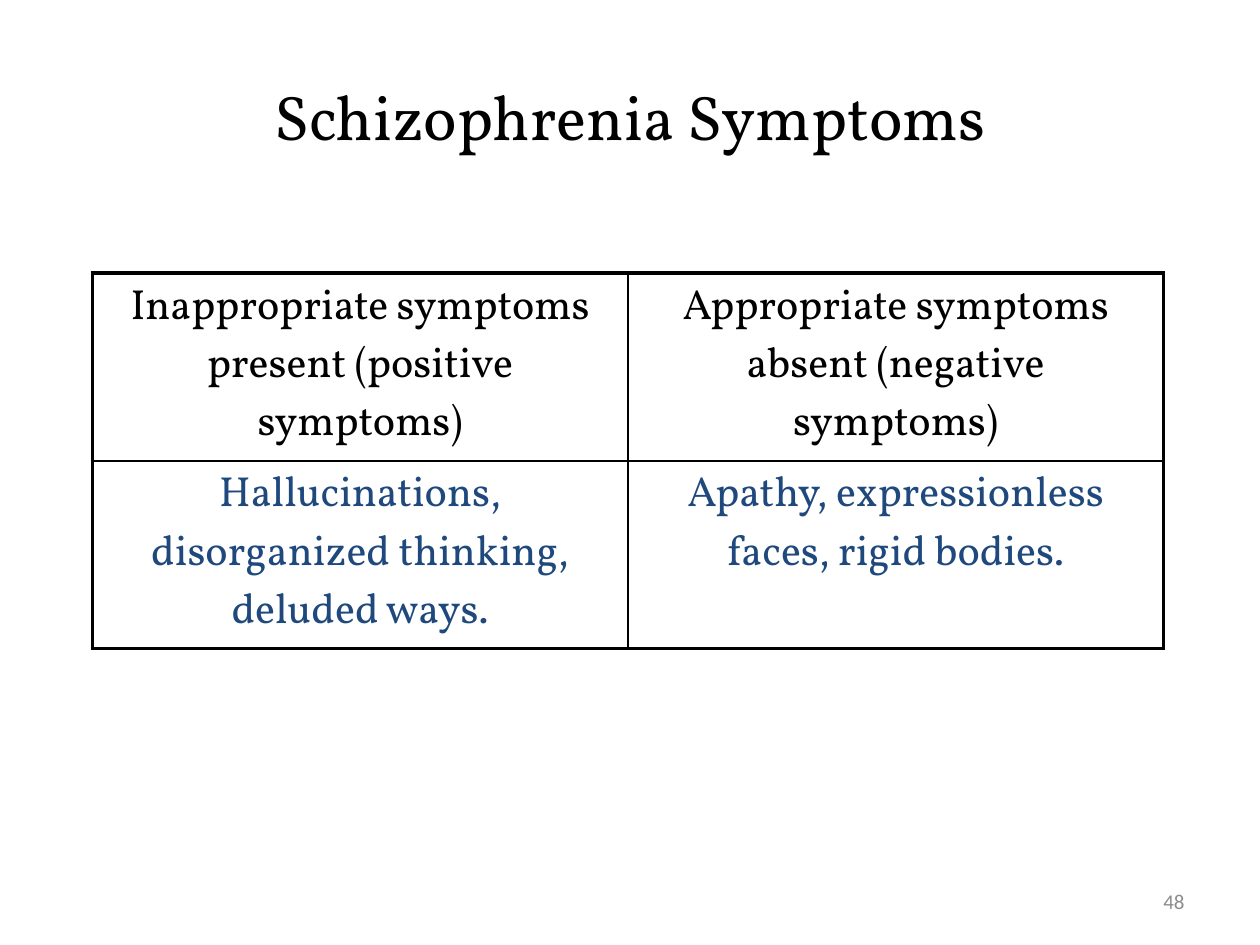
import pptx
import pptx.util
import pptx.dml.color
import pptx.enum.text
import lxml.etree
from pptx.oxml.ns import qn

Pt = pptx.util.Pt
RGB = pptx.dml.color.RGBColor
ALIGN = pptx.enum.text.PP_ALIGN
MIDDLE = pptx.enum.text.MSO_ANCHOR.MIDDLE

# Content
TITLE = "Schizophrenia Symptoms"
ROWS = [
    ("Inappropriate symptoms present (positive symptoms)",
     "Appropriate symptoms absent (negative symptoms)"),
    ("Hallucinations, disorganized thinking, deluded ways.",
     "Apathy, expressionless faces, rigid bodies."),
]
NUMBER = "48"

# Style
BLACK = RGB(0x00, 0x00, 0x00)
BLUE = RGB(0x1F, 0x49, 0x7D)
GRAY = RGB(0x8C, 0x8C, 0x8C)
SERIF, SANS = "Vollkorn", "Calibri"
THICK, THIN = Pt(2.25), Pt(1)
COL_W, ROW_H = 306, 107


def style(frame, font, size, color, align):
    for para in frame.paragraphs:
        para.alignment = align
        for run in para.runs:
            run.font.name = font
            run.font.size = Pt(size)
            run.font.color.rgb = color


def border(cell, widths):
    """Draw black lines on the left, right, top and bottom of a cell."""
    props = cell._tc.get_or_add_tcPr()
    for i, (side, width) in enumerate(zip("LRTB", widths)):
        line = lxml.etree.Element(qn("a:ln" + side), w=str(int(width)))
        fill = lxml.etree.SubElement(line, qn("a:solidFill"))
        lxml.etree.SubElement(fill, qn("a:srgbClr"), val=str(BLACK))
        props.insert(i, line)


def main():
    deck = pptx.Presentation()
    deck.slide_width, deck.slide_height = Pt(720), Pt(540)
    slide = deck.slides.add_slide(deck.slide_layouts[5])

    # Title
    title = slide.shapes.title
    title.left, title.top, title.width, title.height = Pt(54), Pt(21), Pt(612), Pt(90)
    title.text_frame.text = TITLE
    title.text_frame.vertical_anchor = MIDDLE
    style(title.text_frame, SERIF, 36, BLACK, ALIGN.CENTER)

    # Table: thick outer frame, thin inner lines
    rows, cols = len(ROWS), len(ROWS[0])
    table = slide.shapes.add_table(rows, cols, Pt(52.75), Pt(156),
                                   Pt(COL_W * cols), Pt(ROW_H * rows)).table
    table.first_row = table.horz_banding = False
    for r, texts in enumerate(ROWS):
        for c, text in enumerate(texts):
            cell = table.cell(r, c)
            cell.text_frame.text = text
            style(cell.text_frame, SERIF, 24, BLUE if r else BLACK, ALIGN.CENTER)
            cell.fill.background()
            edges = (c == 0, c == cols - 1, r == 0, r == rows - 1)
            border(cell, [THICK if edge else THIN for edge in edges])

    # Slide number
    box = slide.shapes.add_textbox(Pt(516), Pt(500.5), Pt(168), Pt(28.75))
    box.text_frame.word_wrap = True
    box.text_frame.vertical_anchor = MIDDLE
    box.text_frame.text = NUMBER
    style(box.text_frame, SANS, 12, GRAY, ALIGN.RIGHT)

    deck.save("out.pptx")


if __name__ == "__main__":
    main()
